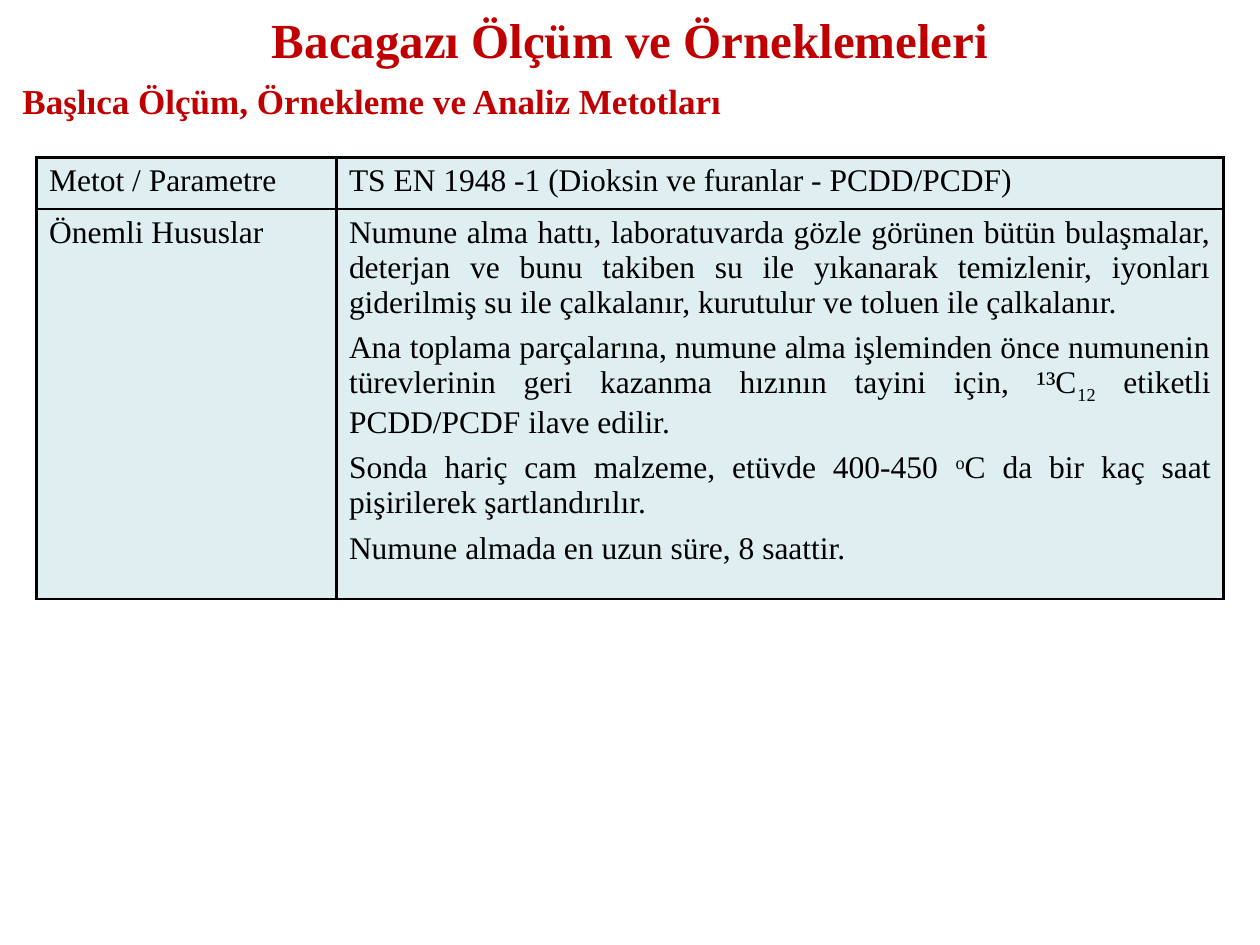
from lxml import etree
from pptx import Presentation
from pptx import util as u
from pptx.dml.color import RGBColor
from pptx.enum import text
from pptx.oxml.ns import qn

COLORS = {"heading": "C00000", "text": "000000", "cell": "8AC6CD", "border": "000000"}
FONT = "Times New Roman"

ROWS = [
    (["Metot / Parametre"], ["TS EN 1948 -1 (Dioksin ve furanlar - PCDD/PCDF)"]),
    (["Önemli Hususlar"], [
        "Numune alma hattı, laboratuvarda gözle görünen bütün bulaşmalar, deterjan ve bunu "
        "takiben su ile yıkanarak temizlenir, iyonları giderilmiş su ile çalkalanır, "
        "kurutulur ve toluen ile çalkalanır.",
        [("Ana toplama parçalarına, numune alma işleminden önce numunenin türevlerinin "
          "geri kazanma hızının tayini için, ¹³C", 0),
         ("12", -25000),
         (" etiketli PCDD/PCDF ilave edilir.", 0)],
        [("Sonda hariç cam malzeme, etüvde 400-450 ", 0),
         ("o", 30000),
         ("C da bir kaç saat pişirilerek şartlandırılır.", 0)],
        "Numune almada en uzun süre, 8 saattir.",
    ]),
]


class Deck:
    def __init__(self, prs):
        self.prs = prs
        self.s = prs.slides.add_slide(prs.slide_layouts[5])

    def font(self, p, size, color, bold=False):
        f = p.font
        f.name, f.size, f.bold = FONT, u.Pt(size), bold
        f.color.rgb = RGBColor.from_string(COLORS[color])

    def title(self, words, x, y, w, h):
        sp = self.s.shapes.title
        sp.left, sp.top, sp.width, sp.height = map(u.Inches, (x, y, w, h))
        tf = sp.text_frame
        tf.text = words
        tf.vertical_anchor = text.MSO_ANCHOR.MIDDLE
        tf.auto_size = text.MSO_AUTO_SIZE.NONE
        p = tf.paragraphs[0]
        p.alignment = text.PP_ALIGN.CENTER
        self.font(p, 28, "heading", True)

    def subtitle(self, words, x, y, w, h):
        tf = self.s.shapes.add_textbox(*map(u.Inches, (x, y, w, h))).text_frame
        tf.word_wrap = True
        tf.auto_size = text.MSO_AUTO_SIZE.SHAPE_TO_FIT_TEXT
        tf.text = words
        self.font(tf.paragraphs[0], 20, "heading", True)

    def table(self, rows, x, y, widths, heights):
        frame = self.s.shapes.add_table(
            len(rows), len(widths),
            *map(u.Inches, (x, y, sum(widths), sum(heights))))
        tbl = frame.table
        tbl.first_row = tbl.horz_banding = False
        for col, w in zip(tbl.columns, widths):
            col.width = u.Inches(w)
        for row, h, contents in zip(tbl.rows, heights, rows):
            row.height = u.Inches(h)
            for cell, paragraphs in zip(row.cells, contents):
                self.cell_text(cell, paragraphs)
                self.cell_style(cell)

    def cell_text(self, cell, paragraphs):
        tf = cell.text_frame
        for i, content in enumerate(paragraphs):
            p = tf.add_paragraph() if i else tf.paragraphs[0]
            p.alignment = text.PP_ALIGN.JUSTIFY
            if i:
                p.space_before = u.Pt(6)
            runs = [(content, 0)] if isinstance(content, str) else content
            for words, baseline in runs:
                r = p.add_run()
                r.text = words
                if baseline:
                    r.font._element.set("baseline", str(baseline))
            self.font(p, 18, "text")

    def cell_style(self, cell):
        tcPr = cell._tc.get_or_add_tcPr()
        for side in ("a:lnL", "a:lnR", "a:lnT", "a:lnB"):
            ln = etree.SubElement(tcPr, qn(side), w=str(u.Pt(1.5)))
            fill = etree.SubElement(ln, qn("a:solidFill"))
            etree.SubElement(fill, qn("a:srgbClr"), val=COLORS["border"])
        cell.fill.solid()
        cell.fill.fore_color.rgb = RGBColor.from_string(COLORS["cell"])
        color = tcPr.find(qn("a:solidFill")).find(qn("a:srgbClr"))
        etree.SubElement(color, qn("a:alpha"), val="27000")


def main():
    prs = Presentation()
    prs.slide_width, prs.slide_height = u.Inches(10), u.Inches(7.5)
    deck = Deck(prs)
    deck.title("Bacagazı Ölçüm ve Örneklemeleri", 0, 0, 10, 0.62)
    deck.subtitle("Başlıca Ölçüm, Örnekleme ve Analiz Metotları", 0.08, 0.58, 9.83, 0.44)
    deck.table(ROWS, 0.29, 1.25, [2.38, 7.04], [0.41, 3.09])
    prs.save("out.pptx")


if __name__ == "__main__":
    main()
